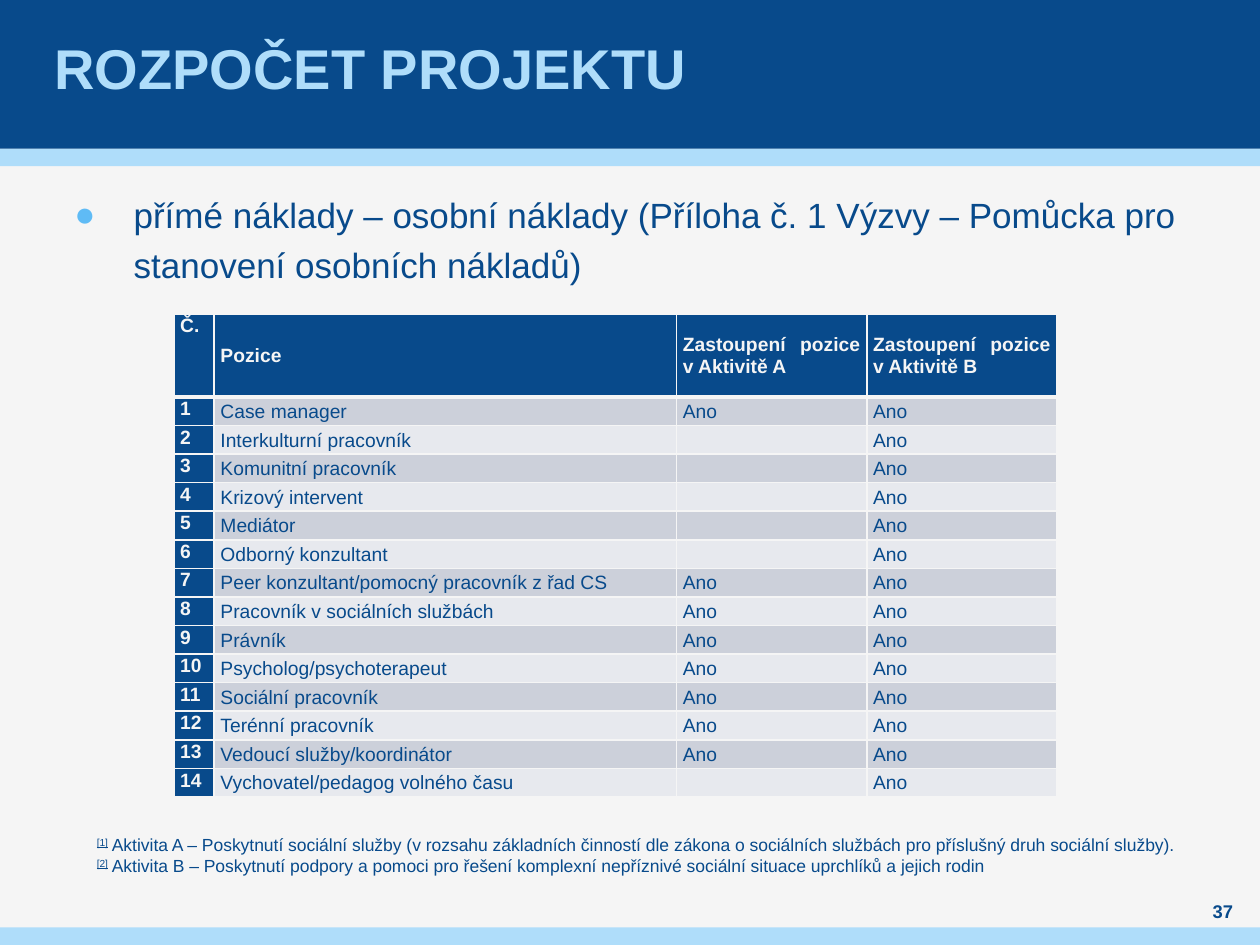
from lxml import etree
from pptx import Presentation, util as u
from pptx.dml.color import RGBColor
from pptx.enum import shapes, text
from pptx.oxml import ns

THEME = {
    "font": "Arial",
    "navy": RGBColor.from_string("084A8B"),
    "sky": RGBColor.from_string("AFDDFA"),
    "bullet": RGBColor.from_string("5FBBF5"),
    "paper": RGBColor.from_string("F5F5F5"),
    "bands": [RGBColor.from_string("E7E9EE"), RGBColor.from_string("CCD0DA")],
    "title_size": 32, "body_size": 20, "table_size": 11,
    "page_size": 10.5, "note_size": 10,
}
NAVY, SKY, PAPER = THEME["navy"], THEME["sky"], THEME["paper"]
TOP, MIDDLE = text.MSO_ANCHOR.TOP, text.MSO_ANCHOR.MIDDLE
LEFT, CENTER, JUSTIFY = text.PP_ALIGN.LEFT, text.PP_ALIGN.CENTER, text.PP_ALIGN.JUSTIFY

deck = Presentation()
deck.slide_width, deck.slide_height = u.Inches(10), u.Inches(7.5)
COL, ROW = deck.slide_width / 100, deck.slide_height / 75
slide = deck.slides.add_slide(deck.slide_layouts[6])
slide.background.fill.solid()
slide.background.fill.fore_color.rgb = PAPER


def place(left, top, width, height):
    """Turn grid columns and rows into slide lengths."""
    return [round(n * unit) for n, unit in zip((left, top, width, height), (COL, ROW) * 2)]


def write(paragraph, words, size, color=NAVY, bold=False, **extra):
    run = paragraph.add_run()
    run.text = words
    look = {"name": THEME["font"], "size": u.Pt(size), "bold": bold, **extra}
    for key, value in look.items():
        setattr(run.font, key, value)
    run.font.color.rgb = color
    return run


# Bands across the slide
for top, height, color in ((11.8, 1.4, SKY), (0, 11.8, NAVY), (73.6, 1.4, SKY)):
    band = slide.shapes.add_shape(shapes.MSO_SHAPE.RECTANGLE, *place(0, top, 100, height))
    band.shadow.inherit = False
    band.fill.solid()
    band.fill.fore_color.rgb = color
    band.line.fill.background()

# Title, main point, page number and footnotes
frames = {}
for part, box, side, edge, anchor in (
    ("title", (3.9, -0.6, 92.1, 11.8), 0.4, 0, MIDDLE),
    ("point", (5.9, 14.7, 88.2, 9), 0, 0, TOP),
    ("page", (94.5, 71.3, 5.1, 2), 0, 0, MIDDLE),
    ("notes", (6.7, 65.7, 88.6, 4.4), 1, 0.5, TOP),
):
    frame = slide.shapes.add_textbox(*place(*box)).text_frame
    layout = {
        "word_wrap": True, "vertical_anchor": anchor,
        "margin_left": round(side * COL), "margin_right": round(side * COL),
        "margin_top": round(edge * ROW), "margin_bottom": round(edge * ROW),
    }
    for key, value in layout.items():
        setattr(frame, key, value)
    frames[part] = frame

write(frames["title"].paragraphs[0], "ROZPOČET PROJEKTU", THEME["title_size"], SKY, True)

page = frames["page"].paragraphs[0]
page.alignment = CENTER
write(page, "37", THEME["page_size"], bold=True)

point = frames["point"].paragraphs[0]
indents = point._p.get_or_add_pPr()
indents.set("marL", str(round(4.7 * COL)))
indents.set("indent", str(round(-4.7 * COL)))
bullet_color = etree.SubElement(indents, ns.qn("a:buClr"))
etree.SubElement(bullet_color, ns.qn("a:srgbClr"), val=str(THEME["bullet"]))
etree.SubElement(indents, ns.qn("a:buFont"), typeface=THEME["font"])
etree.SubElement(indents, ns.qn("a:buChar"), char="●")
point.line_spacing = u.Pt(28.8)
point.space_after = u.Pt(6)
write(point, "přímé náklady – osobní náklady (Příloha č. 1 Výzvy – Pomůcka pro "
      "stanovení osobních nákladů)", THEME["body_size"])

footnotes = (
    "Aktivita A – Poskytnutí sociální služby (v rozsahu základních činností dle zákona "
    "o sociálních službách pro příslušný druh sociální služby).",
    "Aktivita B – Poskytnutí podpory a pomoci pro řešení komplexní nepříznivé sociální "
    "situace uprchlíků a jejich rodin",
)
for number, words in enumerate(footnotes, 1):
    note = frames["notes"].paragraphs[0] if number == 1 else frames["notes"].add_paragraph()
    mark = write(note, f"[{number}]", THEME["note_size"], underline=True)
    mark.font._element.set("baseline", "30000")
    write(note, " " + words, THEME["note_size"])

# Positions and the activities they take part in
header = ("Č.", "Pozice", "Zastoupení pozice v Aktivitě A", "Zastoupení pozice v Aktivitě B")
positions = (
    ("Case manager", True),
    ("Interkulturní pracovník", False),
    ("Komunitní pracovník", False),
    ("Krizový intervent", False),
    ("Mediátor", False),
    ("Odborný konzultant", False),
    ("Peer konzultant/pomocný pracovník z řad CS", True),
    ("Pracovník v sociálních službách", True),
    ("Právník", True),
    ("Psycholog/psychoterapeut", True),
    ("Sociální pracovník", True),
    ("Terénní pracovník", True),
    ("Vedoucí služby/koordinátor", True),
    ("Vychovatel/pedagog volného času", False),
)
rows = [header] + [
    (str(number), name, "Ano" if in_a else "", "Ano")
    for number, (name, in_a) in enumerate(positions, 1)
]
HEAD_ROWS, TABLE_ROWS = 6.6, 38.4
table = slide.shapes.add_table(
    len(rows), len(header), *place(13.8, 24.9, 70.1, TABLE_ROWS)).table
for column, width in zip(table.columns, (3.2, 36.7, 15.1, 15.1)):
    column.width = round(width * COL)
for r, line in enumerate(rows):
    height = HEAD_ROWS if r == 0 else (TABLE_ROWS - HEAD_ROWS) / len(positions)
    table.rows[r].height = round(height * ROW)
    for c, words in enumerate(line):
        cell = table.cell(r, c)
        heading = r == 0 or c == 0
        layout = {
            "margin_left": round(0.5 * COL), "margin_right": round(0.5 * COL),
            "margin_top": 0, "margin_bottom": 0,
            "vertical_anchor": TOP if c == 0 else MIDDLE,
        }
        for key, value in layout.items():
            setattr(cell, key, value)
        for side in ("lnL", "lnR", "lnT", "lnB"):
            thick = (r, side) in ((0, "lnB"), (1, "lnT"))
            border = etree.SubElement(cell._tc.get_or_add_tcPr(), ns.qn("a:" + side),
                                      w=str(u.Pt(3 if thick else 1)))
            paint = etree.SubElement(border, ns.qn("a:solidFill"))
            etree.SubElement(paint, ns.qn("a:srgbClr"), val=str(PAPER))
        cell.fill.solid()
        cell.fill.fore_color.rgb = NAVY if heading else THEME["bands"][r % 2]
        entry = cell.text_frame.paragraphs[0]
        spacing = {
            "alignment": JUSTIFY if r == 0 or c > 1 else LEFT,
            "line_spacing": 1.06, "space_after": u.Pt(8),
        }
        for key, value in spacing.items():
            setattr(entry, key, value)
        if words:
            write(entry, words, THEME["table_size"], PAPER if heading else NAVY, heading)
        else:
            etree.SubElement(entry._p, ns.qn("a:endParaRPr"),
                             sz=str(THEME["table_size"] * 100))

deck.save("out.pptx")
